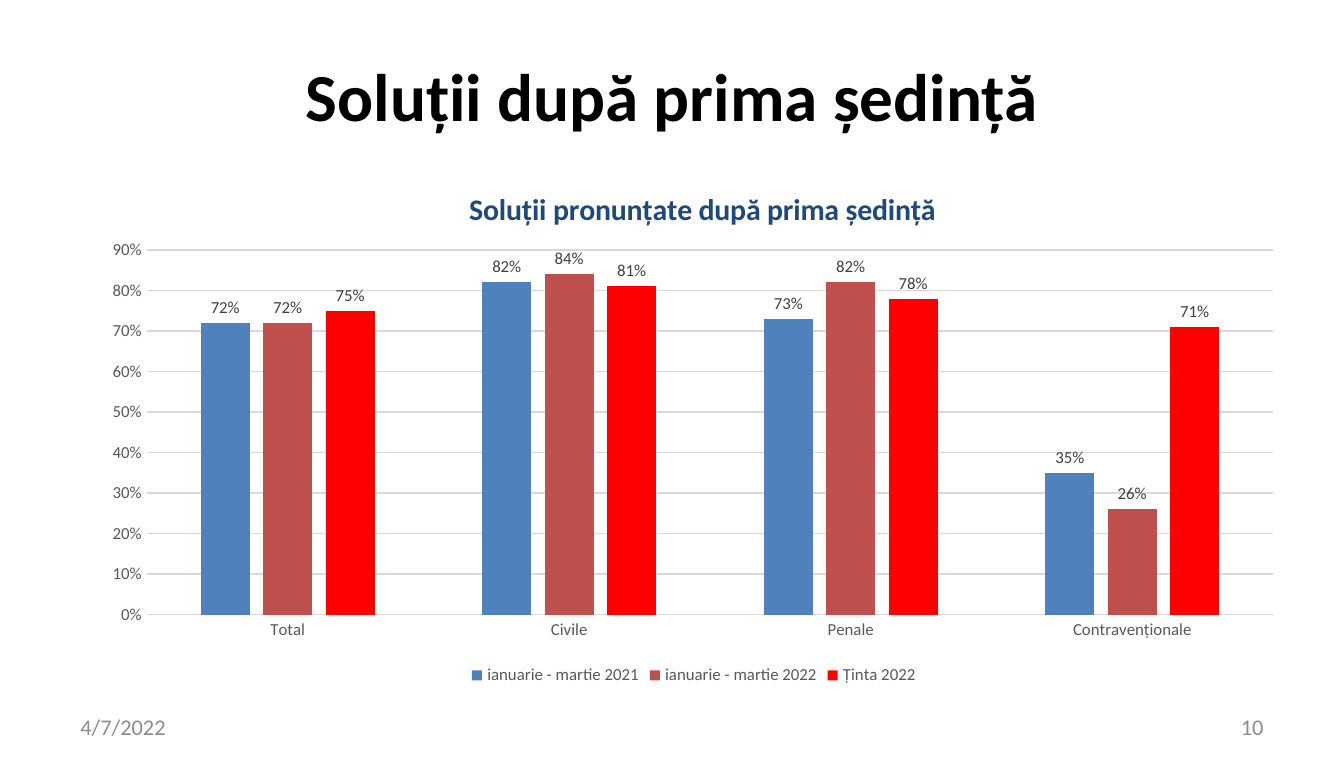
import pptx
import pptx.chart.data
import pptx.dml.color
import pptx.enum.chart
import pptx.enum.text
import pptx.oxml
import pptx.oxml.ns
import pptx.util
from pptx.util import Cm

RGBColor = pptx.dml.color.RGBColor
BLACK = RGBColor(0x00, 0x00, 0x00)
FOOTER_GRAY = RGBColor(0x8C, 0x8C, 0x8C)
AXIS_GRAY = RGBColor(0x59, 0x59, 0x59)
LABEL_GRAY = RGBColor(0x40, 0x40, 0x40)
GRID_GRAY = RGBColor(0xD9, 0xD9, 0xD9)
NAVY = RGBColor(0x1F, 0x49, 0x7D)
BLUE = RGBColor(0x4F, 0x81, 0xBD)
BRICK = RGBColor(0xC0, 0x50, 0x4D)
RED = RGBColor(0xFF, 0x00, 0x00)

ALIGN = pptx.enum.text.PP_ALIGN
CHART_NS = pptx.oxml.ns.nsdecls("c")
FONT = "Calibri"

CASE_TYPES = ["Total", "Civile", "Penale", "Contravenționale"]
PERIODS = [
    ("ianuarie - martie 2021", BLUE, [0.72, 0.82, 0.73, 0.35]),
    ("ianuarie - martie 2022", BRICK, [0.72, 0.84, 0.82, 0.26]),
    ("Ținta 2022", RED, [0.75, 0.81, 0.78, 0.71]),
]


def style_font(font, size, color, bold=False):
    font.name = FONT
    font.size = pptx.util.Pt(size)
    font.bold = bold
    font.color.rgb = color


def write_text(frame, text, size, color, bold=False, align=ALIGN.LEFT, after=6):
    paragraph = frame.paragraphs[0]
    paragraph.alignment = align
    if after is not None:
        paragraph.space_after = pptx.util.Pt(after)
    run = paragraph.add_run()
    run.text = text
    style_font(run.font, size, color, bold)


def prepare_frame(frame):
    frame.word_wrap = True
    frame.auto_size = pptx.enum.text.MSO_AUTO_SIZE.NONE
    frame.vertical_anchor = pptx.enum.text.MSO_ANCHOR.MIDDLE


def place_heading(slide, left, top, width, height):
    heading = slide.shapes.title
    heading.left, heading.top = Cm(left), Cm(top)
    heading.width, heading.height = Cm(width), Cm(height)
    prepare_frame(heading.text_frame)
    write_text(heading.text_frame, "Soluții după prima ședință", 36, BLACK,
               bold=True, align=ALIGN.CENTER)


def place_footer(slide, left, top, width, height):
    entry_width = 5.92
    entries = [
        ("4/7/2022", left, ALIGN.LEFT),
        ("10", left + width - entry_width, ALIGN.RIGHT),
    ]
    for text, entry_left, align in entries:
        entry = slide.shapes.add_textbox(
            Cm(entry_left), Cm(top), Cm(entry_width), Cm(height))
        prepare_frame(entry.text_frame)
        write_text(entry.text_frame, text, 12, FOOTER_GRAY, align=align)


def set_layout(parent, position, target=None, **fractions):
    for old in parent.findall(pptx.oxml.ns.qn("c:layout")):
        parent.remove(old)
    inner = f'<c:layoutTarget val="{target}"/>' if target else ""
    inner += "".join(f'<c:{side}Mode val="edge"/>' for side in "xy")
    inner += "".join(f'<c:{key} val="{value}"/>' for key, value in fractions.items())
    parent.insert(position, pptx.oxml.parse_xml(
        f"<c:layout {CHART_NS}><c:manualLayout>{inner}</c:manualLayout></c:layout>"))


def style_axes(chart):
    rates, cases = chart.value_axis, chart.category_axis
    for axis in (rates, cases):
        axis.major_tick_mark = pptx.enum.chart.XL_TICK_MARK.NONE
        axis.minor_tick_mark = pptx.enum.chart.XL_TICK_MARK.NONE
        style_font(axis.tick_labels.font, 9, AXIS_GRAY)
    rates.minimum_scale, rates.maximum_scale, rates.major_unit = 0, 0.9, 0.1
    rates.tick_labels.number_format = "0%"
    rates.tick_labels.number_format_is_linked = False
    rates.format.line.fill.background()
    for line in (rates.major_gridlines.format.line, cases.format.line):
        line.color.rgb = GRID_GRAY
        line.width = pptx.util.Pt(0.75)


def style_bars(plot):
    plot.gap_width = 219
    plot.overlap = -27
    plot.vary_by_categories = False
    for series, (_, color, _) in zip(plot.series, PERIODS):
        series.format.fill.solid()
        series.format.fill.fore_color.rgb = color
        labels = series.data_labels
        labels.show_value = True
        labels.number_format = "0%"
        labels.number_format_is_linked = False
        labels.position = pptx.enum.chart.XL_LABEL_POSITION.OUTSIDE_END
        style_font(labels.font, 9, LABEL_GRAY)


def place_solutions_chart(slide, left, top, width, height):
    data = pptx.chart.data.CategoryChartData(number_format="0%")
    data.categories = CASE_TYPES
    for period, _, rates in PERIODS:
        data.add_series(period, rates)
    chart = slide.shapes.add_chart(
        pptx.enum.chart.XL_CHART_TYPE.COLUMN_CLUSTERED,
        Cm(left), Cm(top), Cm(width), Cm(height), data).chart
    style_font(chart.font, 10, BLACK)

    chart.has_title = True
    write_text(chart.chart_title.text_frame, "Soluții pronunțate după prima ședință",
               16, NAVY, bold=True, align=ALIGN.CENTER, after=None)
    chart.chart_title.include_in_layout = False
    title_part = chart._chartSpace.chart.find(pptx.oxml.ns.qn("c:title"))
    set_layout(title_part, 1, x=0.31, y=0.05)
    set_layout(chart._chartSpace.chart.plotArea, 0, target="inner",
               x=0.048, y=0.174, w=0.931, h=0.684)

    chart.has_legend = True
    chart.legend.position = pptx.enum.chart.XL_LEGEND_POSITION.BOTTOM
    chart.legend.include_in_layout = False
    style_font(chart.legend.font, 9, AXIS_GRAY)
    style_axes(chart)
    style_bars(chart.plots[0])


def main():
    deck = pptx.Presentation()
    deck.slide_width, deck.slide_height = Cm(25.4), Cm(14.4)
    slide = deck.slides.add_slide(deck.slide_layouts[5])
    place_heading(slide, 1.27, 0.58, 22.86, 2.41)
    place_footer(slide, 1.27, 13.36, 22.86, 0.76)
    place_solutions_chart(slide, 1.68, 2.97, 22.86, 10.08)
    deck.save("out.pptx")


if __name__ == "__main__":
    main()
